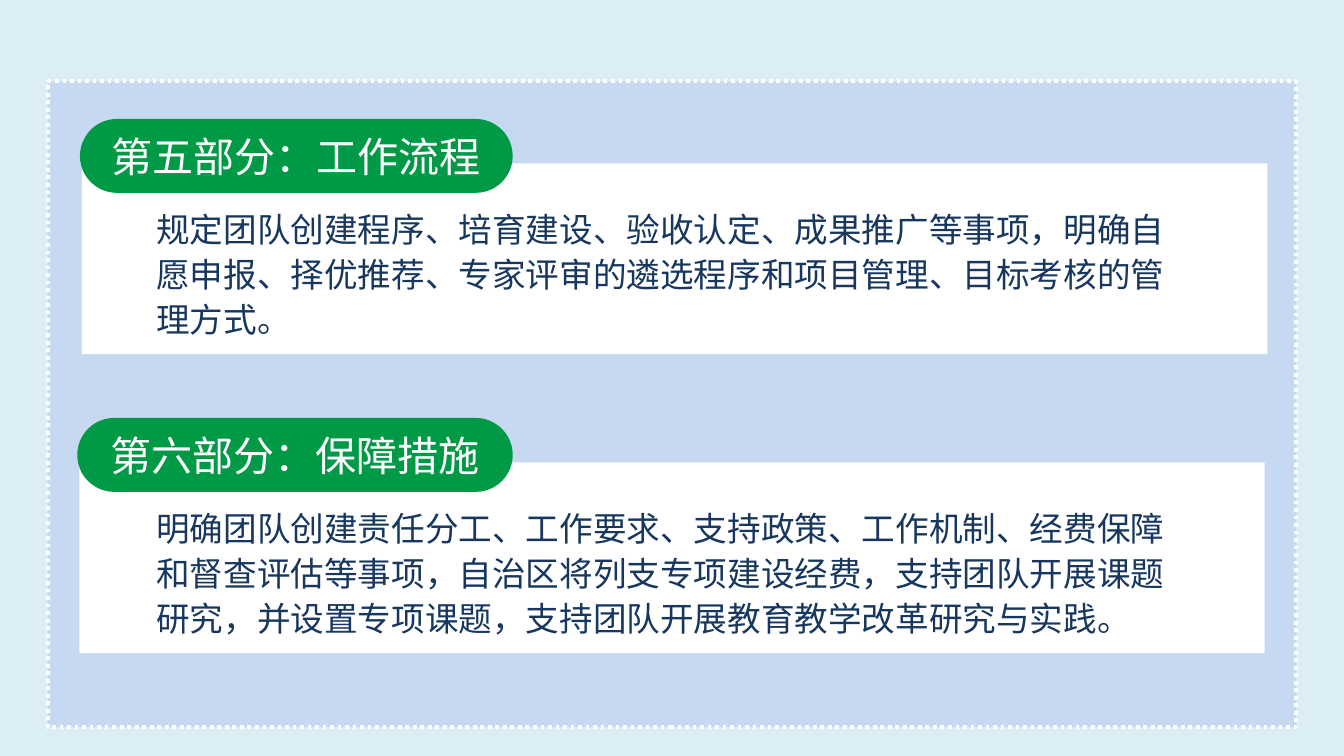
from dataclasses import dataclass

from lxml import etree
from pptx import Presentation
from pptx.dml.color import RGBColor
from pptx.enum.dml import MSO_LINE
from pptx.enum.shapes import MSO_SHAPE
from pptx.enum.text import MSO_ANCHOR, PP_ALIGN
from pptx.oxml.ns import qn
from pptx.util import Pt

RECT = MSO_SHAPE.RECTANGLE
PILL = MSO_SHAPE.ROUNDED_RECTANGLE
DOTTED = MSO_LINE.ROUND_DOT
MIDDLE = MSO_ANCHOR.MIDDLE
CENTER = PP_ALIGN.CENTER
PX = 4572


@dataclass(frozen=True)
class Theme:
    font: str = "Noto Sans CJK SC"
    back: RGBColor = RGBColor(0xDB, 0xEE, 0xF4)
    panel: RGBColor = RGBColor(0xC6, 0xD9, 0xF1)
    white: RGBColor = RGBColor(0xFF, 0xFF, 0xFF)
    green: RGBColor = RGBColor(0x00, 0x9A, 0x46)
    navy: RGBColor = RGBColor(0x17, 0x37, 0x5E)
    heading: int = 22
    body: int = 18
    leading: int = 24


theme = Theme()


def add_box(kind, x, y, w, h, fill):
    sp = s.shapes.add_shape(kind, x * PX, y * PX, w * PX, h * PX)
    sp.shadow.inherit = False
    sp.fill.solid()
    sp.fill.fore_color.rgb = fill
    sp.line.fill.background()
    return sp


def set_text(tf, text, size, color):
    tf.word_wrap = True
    p = tf.paragraphs[0]
    p.text = text
    p.font.size = Pt(size)
    p.font.color.rgb = color
    p.font.name = theme.font
    ea = etree.SubElement(p.font._element, qn("a:ea"))
    ea.set("typeface", theme.font)
    return p


prs = Presentation()
prs.slide_width = 2000 * PX
prs.slide_height = 1125 * PX
s = prs.slides.add_slide(prs.slide_layouts[6])
s.background.fill.solid()
s.background.fill.fore_color.rgb = theme.back

panel = add_box(RECT, 71, 121, 1858, 961, theme.panel)
panel.line.color.rgb = theme.white
panel.line.width = Pt(2)
panel.line.dash_style = DOTTED

sections = [
    (122, 119, 644, 177, 1546, "第五部分：工作流程",
     "规定团队创建程序、培育建设、验收认定、成果推广等事项，明确自愿申报、"
     "择优推荐、专家评审的遴选程序和项目管理、目标考核的管理方式。"),
    (118, 115, 648, 622, 1542, "第六部分：保障措施",
     "明确团队创建责任分工、工作要求、支持政策、工作机制、经费保障和督查评估等事项，"
     "自治区将列支专项建设经费，支持团队开展课题研究，并设置专项课题，"
     "支持团队开展教育教学改革研究与实践。"),
]

for card_x, pill_x, pill_w, top, body_w, heading, body in sections:
    add_box(RECT, card_x, top + 66, 1764, 284, theme.white)

    pill = add_box(PILL, pill_x, top, pill_w, 110, theme.green)
    pill.adjustments[0] = 0.5
    tf = pill.text_frame
    tf.vertical_anchor = MIDDLE
    p = set_text(tf, heading, theme.heading, theme.white)
    p.alignment = CENTER

    tb = s.shapes.add_textbox(213 * PX, (top + 118) * PX, body_w * PX, 222 * PX)
    p = set_text(tb.text_frame, body, theme.body, theme.navy)
    p.line_spacing = Pt(theme.leading)

prs.save("out.pptx")
